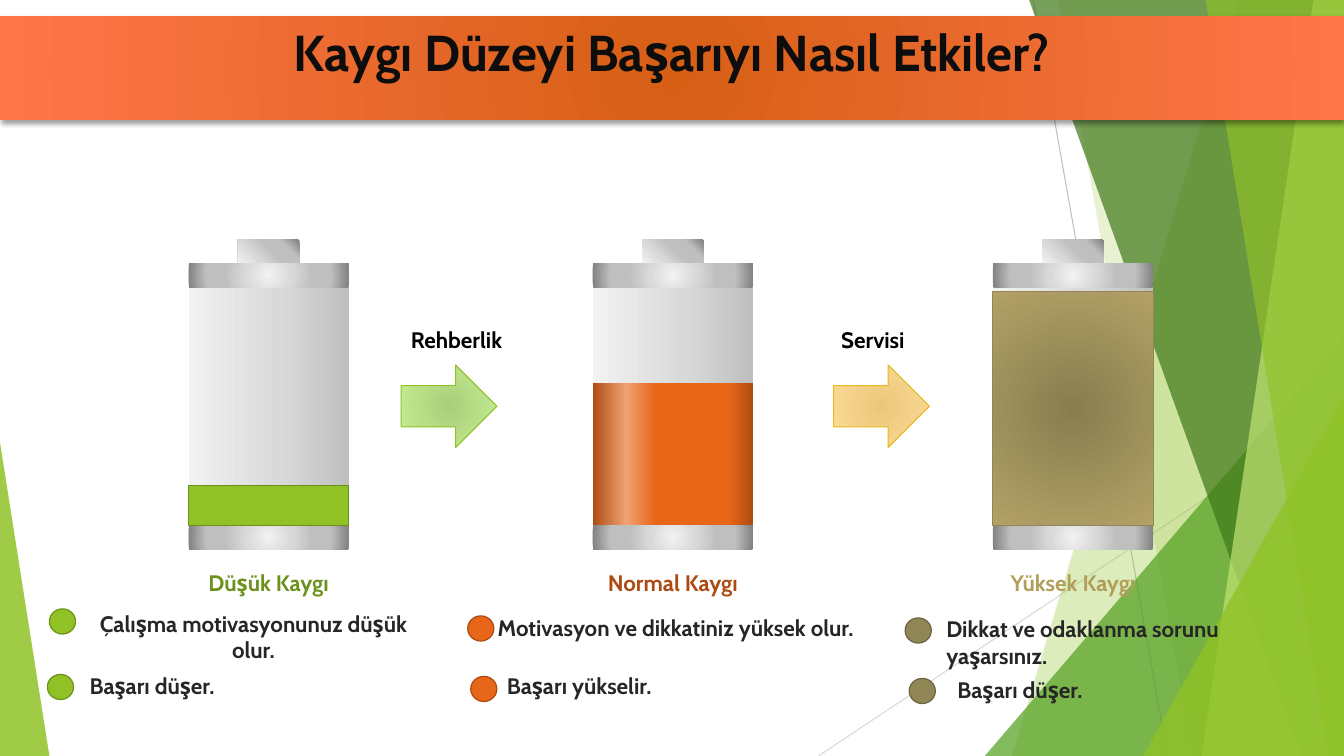
from dataclasses import dataclass
from typing import Optional, Union

from lxml.etree import SubElement
from pptx import Presentation
from pptx.dml.color import RGBColor
from pptx.enum.shapes import MSO_CONNECTOR, MSO_SHAPE
from pptx.enum.text import MSO_ANCHOR, MSO_AUTO_SIZE, PP_ALIGN
from pptx.oxml.ns import qn
from pptx.util import Inches, Pt

# The slide is a grid of 160 columns by 90 rows with square cells
COLUMNS, ROWS = 160, 90
CELL = Inches(1) / 12
FONT = "Cabin"
DARK = "262626"


@dataclass(frozen=True)
class Gradient:
    stops: tuple[tuple[int, str], ...]
    angle: int = 0
    circle: Optional[tuple[int, int, int, int]] = None


Paint = Union[str, Gradient]


@dataclass(frozen=True)
class Facet:
    points: tuple[tuple[float, float], ...]
    color: str
    opacity: int


@dataclass(frozen=True)
class Corner:
    left: float
    top: float
    width: float
    apex: int
    color: str
    opacity: int


@dataclass(frozen=True)
class Note:
    text: str
    dot: tuple[float, float]
    box: tuple[float, float, float]
    align: PP_ALIGN = PP_ALIGN.LEFT


@dataclass(frozen=True)
class Battery:
    left: float
    level: float
    charge: Paint
    charge_line: Optional[tuple[str, float]]
    label: str
    label_paint: Paint
    dot_color: str
    dot_line: str
    notes: tuple[Note, ...]


@dataclass(frozen=True)
class Arrow:
    left: float
    inner: str
    outer: str
    line: str
    label: str
    label_left: float
    label_width: float


def cells(count: float) -> int:
    return round(count * CELL)


def color(value: str) -> RGBColor:
    return RGBColor.from_string(value)


def apply_paint(fill, parent, paint: Paint, opacity: int = 100) -> None:
    """Fill a shape or a run with a plain colour or a gradient."""
    fill.solid()
    fill.fore_color.rgb = color(paint if isinstance(paint, str) else paint.stops[0][1])
    solid = parent.find(qn("a:solidFill"))
    if opacity < 100:
        SubElement(solid[0], qn("a:alpha"), val=str(opacity * 1000))
    if isinstance(paint, Gradient):
        gradient = SubElement(parent, qn("a:gradFill"), rotWithShape="1")
        stop_list = SubElement(gradient, qn("a:gsLst"))
        for position, value in paint.stops:
            stop = SubElement(stop_list, qn("a:gs"), pos=str(position * 1000))
            SubElement(stop, qn("a:srgbClr"), val=value)
        if paint.circle:
            route = SubElement(gradient, qn("a:path"), path="circle")
            sides = {side: str(share * 1000) for side, share in zip("ltrb", paint.circle)}
            SubElement(route, qn("a:fillToRect"), **sides)
        else:
            SubElement(gradient, qn("a:lin"), ang=str(paint.angle * 60000), scaled="0")
        parent.replace(solid, gradient)


def finish(shape, paint: Paint, line: Optional[tuple[str, float]] = None, opacity: int = 100):
    shape.shadow.inherit = False
    apply_paint(shape.fill, shape.element.spPr, paint, opacity)
    if line:
        shape.line.color.rgb, shape.line.width = color(line[0]), Pt(line[1])
    else:
        shape.line.fill.background()
    return shape


def add_preset(slide, kind: MSO_SHAPE, left: float, top: float, width: float, height: float,
               paint: Paint, line: Optional[tuple[str, float]] = None, opacity: int = 100):
    shape = slide.shapes.add_shape(kind, *map(cells, (left, top, width, height)))
    return finish(shape, paint, line, opacity)


def write(shape, text: str, size: float, paint: Paint, align: PP_ALIGN) -> None:
    paragraph = shape.text_frame.paragraphs[0]
    paragraph.text, paragraph.alignment = text, align
    run = paragraph.runs[0]
    run.font.size, run.font.bold = Pt(size), True
    apply_paint(run.font.fill, run.font._element, paint)
    run.font.name = FONT


def add_text(slide, text: str, left: float, top: float, width: float, paint: Paint,
             align: PP_ALIGN = PP_ALIGN.CENTER, wrap: bool = False) -> None:
    box = slide.shapes.add_textbox(*map(cells, (left, top, width, 4.44)))
    box.text_frame.word_wrap = wrap
    box.text_frame.auto_size = MSO_AUTO_SIZE.SHAPE_TO_FIT_TEXT
    write(box, text, 16, paint, align)


def add_hairline(slide, start: tuple[float, float], end: tuple[float, float], value: str) -> None:
    line = slide.shapes.add_connector(MSO_CONNECTOR.STRAIGHT, *map(cells, start + end))
    line.line.color.rgb, line.line.width = color(value), Pt(0.75)
    SubElement(line.element.spPr, qn("a:effectLst"))


def add_backdrop_part(slide, part: Union[Facet, Corner]) -> None:
    if isinstance(part, Corner):
        triangle = add_preset(slide, MSO_SHAPE.ISOSCELES_TRIANGLE, part.left, part.top, part.width,
                              ROWS - part.top, part.color, opacity=part.opacity)
        triangle.adjustments[0] = part.apex
        return
    points = [(cells(x), cells(y)) for x, y in part.points]
    builder = slide.shapes.build_freeform(*points[0], scale=1.0)
    builder.add_line_segments(points[1:], close=True)
    finish(builder.convert_to_shape(), part.color, opacity=part.opacity)


def edge_facet(top: float, bottom: float, value: str, opacity: int) -> Facet:
    """A facet from a slanted edge to the right side of the slide."""
    return Facet(((top, 0), (COLUMNS, 0), (COLUMNS, ROWS), (bottom, ROWS)), value, opacity)


def add_battery(slide, battery: Battery) -> None:
    left, width, top, base, band = battery.left, 19.08, 31.32, 62.52, 2.88
    rectangle = MSO_SHAPE.RECTANGLE
    add_preset(slide, rectangle, left, top, width, base + band - top, BODY)
    add_preset(slide, rectangle, left + 5.88, 28.56, 7.32, 2.76, Gradient(METAL, circle=(0, 100, 100, 0)))
    for band_top in (top, base):
        add_preset(slide, rectangle, left, band_top, width, band, Gradient(METAL, circle=(50,) * 4))
    add_preset(slide, rectangle, left, battery.level, width, base - battery.level,
               battery.charge, battery.charge_line)
    add_text(slide, battery.label, left, 67.2, width, battery.label_paint)
    for note in battery.notes:
        add_preset(slide, MSO_SHAPE.OVAL, *note.dot, 3.12, 3, battery.dot_color, (battery.dot_line, 0.85))
        add_text(slide, note.text, *note.box, DARK, note.align, wrap=True)


def add_arrow(slide, arrow: Arrow) -> None:
    add_preset(slide, MSO_SHAPE.RIGHT_ARROW, arrow.left, 43.44, 11.4, 9.84,
               glow(arrow.inner, arrow.outer), (arrow.line, 0.75))
    add_text(slide, arrow.label, arrow.label_left, 38.28, arrow.label_width, "000000")


def add_title(slide, text: str) -> None:
    banner = add_preset(slide, MSO_SHAPE.RECTANGLE, 0, 1.92, COLUMNS, 12.36, glow("D75F16", "FF764A"))
    shadow = SubElement(banner.element.spPr.find(qn("a:effectLst")), qn("a:outerShdw"),
                        blurRad=str(Pt(3.5)), dist=str(Pt(1.7)), dir="5400000", rotWithShape="0")
    SubElement(SubElement(shadow, qn("a:srgbClr"), val="000000"), qn("a:alpha"), val="40000")
    banner.text_frame.word_wrap = True
    banner.text_frame.vertical_anchor = MSO_ANCHOR.TOP
    write(banner, text, 36, "0D0D0D", PP_ALIGN.CENTER)


def glow(inner: str, outer: str) -> Gradient:
    return Gradient(((0, inner), (100, outer)), circle=(100,) * 4)


BODY = Gradient(((0, "F2F2F2"), (57, "D9D9D9"), (100, "BFBFBF")))
METAL = ((0, "F2F2F2"), (29, "D9D9D9"), (55, "BFBFBF"), (77, "BFBFBF"), (100, "808080"))
ORANGE = Gradient(((0, "AD4C12"), (21, "F1A374"), (39, "E76618"), (85, "E76618"), (100, "AD4C12")))
KHAKI_TEXT = Gradient(((0, "574C1B"), (78, "B19F59"), (100, "F7F6F0")), angle=90)

BACKDROP = (
    edge_facet(147.36, 120.48, "90C226", 30),
    edge_facet(126, 142, "90C226", 20),
    Corner(117.24, 40, 42.76, 1, "54A021", 72),
    edge_facet(122.52, 154.92, "3F7819", 70),
    edge_facet(156.36, 143.04, "C0E474", 70),
    edge_facet(143.52, 158.16, "90C226", 65),
    Corner(136.08, 47.16, 23.92, 1, "90C226", 80),
    Corner(0, 52.68, 5.88, 0, "90C226", 85),
)
BATTERIES = (
    Battery(22.44, 57.84, "90C226", ("6B901C", 0.85), "Düşük Kaygı", "6C921D", "90C226", "6B901C", (
        Note("Çalışma motivasyonunuz düşük olur.", (5.88, 72.48), (8.64, 72, 43.08), PP_ALIGN.CENTER),
        Note("Başarı düşer.", (5.64, 80.28), (9.48, 79.44, 43.08)))),
    Battery(70.56, 45.6, ORANGE, None, "Normal Kaygı", "AD4C12", "E76618", "AB4B12", (
        Note("Motivasyon ve dikkatiniz yüksek olur.", (55.68, 73.32), (56.88, 72.48, 47.16), PP_ALIGN.CENTER),
        Note("Başarı yükselir.", (56.04, 80.52), (59.16, 79.44, 43.08)))),
    Battery(118.2, 34.68, glow("877D4F", "B2A266"), ("918655", 0.75), "Yüksek Kaygı", KHAKI_TEXT,
            "918655", "6B633F", (
        Note("Dikkat ve odaklanma sorunu yaşarsınız.", (107.76, 73.56), (111.48, 72.6, 46.44)),
        Note("Başarı düşer.", (108.24, 80.76), (112.8, 79.92, 47.16)))),
)
ARROWS = (
    Arrow(47.76, "AACE79", "C7F097", "90C226", "Rehberlik", 46.92, 14.88),
    Arrow(99.24, "EAC778", "FFDC9B", "E6B91E", "Servisi", 98.4, 11.04),
)


def main() -> None:
    presentation = Presentation()
    presentation.slide_width, presentation.slide_height = cells(COLUMNS), cells(ROWS)
    slide = presentation.slides.add_slide(presentation.slide_layouts[6])
    # Backdrop
    add_hairline(slide, (123, 0), (139, ROWS), "BFBFBF")
    add_hairline(slide, (COLUMNS, 48.36), (97.44, ROWS), "D9D9D9")
    for part in BACKDROP:
        add_backdrop_part(slide, part)
    # Batteries with their notes, and the arrows between them
    for battery in BATTERIES:
        add_battery(slide, battery)
    for arrow in ARROWS:
        add_arrow(slide, arrow)
    # Title banner
    add_title(slide, "Kaygı Düzeyi Başarıyı Nasıl Etkiler?")
    presentation.save("out.pptx")


if __name__ == "__main__":
    main()
